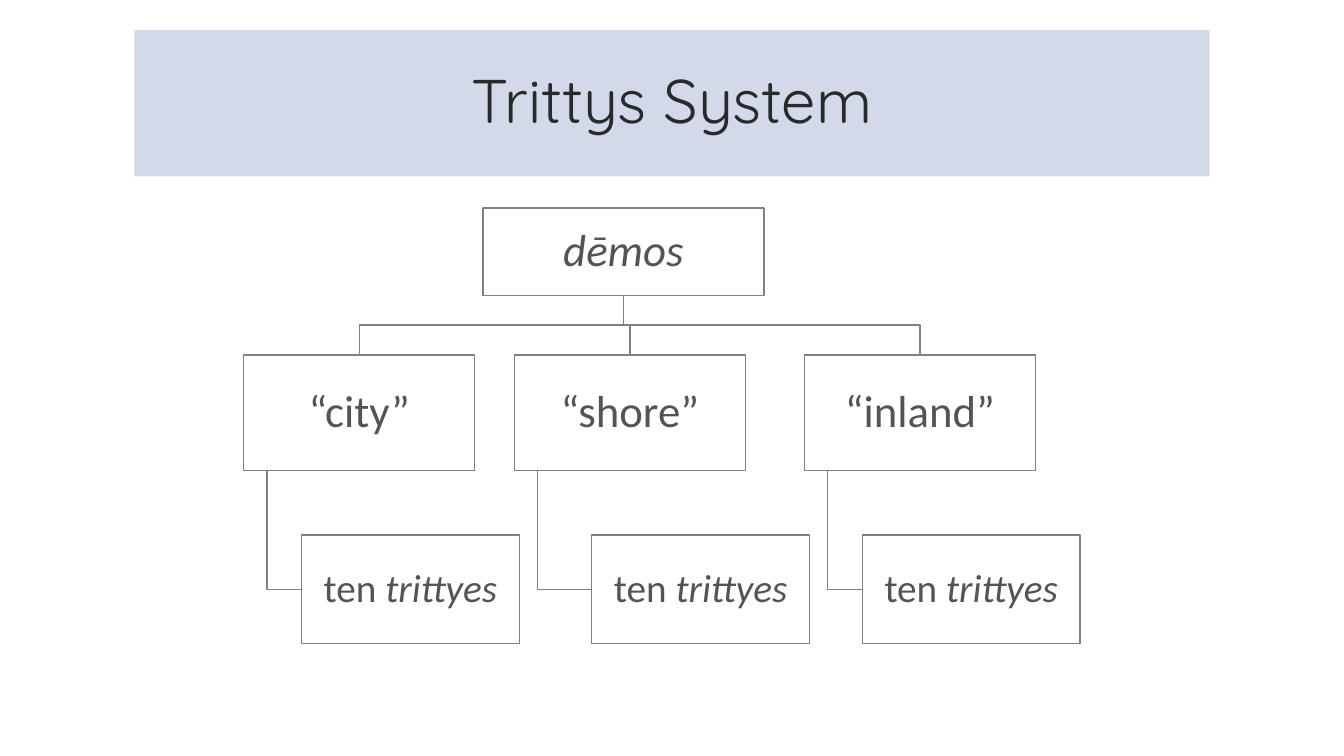
"""Build the Trittys System slide: a title band above a three-branch hierarchy."""
from pptx import Presentation
from pptx.dml.color import RGBColor
from pptx.enum.shapes import MSO_SHAPE
from pptx.enum.text import MSO_ANCHOR, PP_ALIGN
from pptx.util import Pt

BAND = RGBColor(0xD2, 0xDA, 0xEA)
TITLE_INK = RGBColor(0x2A, 0x2A, 0x2A)
INK = RGBColor(0x54, 0x54, 0x54)
GREY = RGBColor(0x80, 0x80, 0x80)
WHITE = RGBColor(0xFF, 0xFF, 0xFF)

presentation = Presentation()
presentation.slide_width = Pt(960)
presentation.slide_height = Pt(540)
slide = presentation.slides.add_slide(presentation.slide_layouts[6])


def add_box(left, top, width, height, runs, size, font="Calibri",
            ink=INK, fill=WHITE, line=GREY, inset=1.5):
    shape = slide.shapes.add_shape(
        MSO_SHAPE.RECTANGLE, Pt(left), Pt(top), Pt(width), Pt(height))
    shape.shadow.inherit = False
    shape.fill.solid()
    shape.fill.fore_color.rgb = fill
    if line is None:
        shape.line.fill.background()
    else:
        shape.line.color.rgb = line
        shape.line.width = Pt(1)
    frame = shape.text_frame
    frame.word_wrap = True
    frame.vertical_anchor = MSO_ANCHOR.MIDDLE
    frame.margin_left = frame.margin_right = Pt(inset)
    frame.margin_top = frame.margin_bottom = Pt(inset)
    paragraph = frame.paragraphs[0]
    paragraph.alignment = PP_ALIGN.CENTER
    paragraph.line_spacing = 0.9
    paragraph.font.size = Pt(size)
    paragraph.font.name = font
    paragraph.font.color.rgb = ink
    for text, italic in runs:
        run = paragraph.add_run()
        run.text = text
        run.font.italic = italic


def add_branch(points):
    start, *others = [(Pt(x), Pt(y)) for x, y in points]
    builder = slide.shapes.build_freeform(*start)
    builder.add_line_segments(others, close=False)
    shape = builder.convert_to_shape()
    shape.shadow.inherit = False
    shape.fill.background()
    shape.line.color.rgb = GREY
    shape.line.width = Pt(1)


add_box(96, 21.6, 768, 104.4, [("Trittys System", False)], 44,
        font="Quicksand", ink=TITLE_INK, fill=BAND, line=None, inset=7.2)

ROOT_LEFT, ROOT_TOP, ROOT_WIDTH, ROOT_HEIGHT = 344.9, 148.5, 200.9, 62.5
REGION_TOP, REGION_WIDTH, REGION_HEIGHT = 253.5, 165, 82.5
LEAF_TOP, LEAF_WIDTH, LEAF_HEIGHT = 382.2, 155.5, 77.5
REGIONS = [("“city”", 174.1, 215.4), ("“shore”", 367.4, 422.7), ("“inland”", 574.7, 616)]

root_middle = ROOT_LEFT + ROOT_WIDTH / 2
root_bottom = ROOT_TOP + ROOT_HEIGHT
bar_y = (root_bottom + REGION_TOP) / 2
leaf_middle = LEAF_TOP + LEAF_HEIGHT / 2

for name, region_left, leaf_left in REGIONS:
    region_middle = region_left + REGION_WIDTH / 2
    stem_x = region_left + REGION_WIDTH / 10
    add_branch([(root_middle, root_bottom), (root_middle, bar_y),
                (region_middle, bar_y), (region_middle, REGION_TOP)])
    add_branch([(stem_x, REGION_TOP + REGION_HEIGHT), (stem_x, leaf_middle),
                (leaf_left, leaf_middle)])

add_box(ROOT_LEFT, ROOT_TOP, ROOT_WIDTH, ROOT_HEIGHT, [("dēmos", True)], 32)
for name, region_left, leaf_left in REGIONS:
    add_box(region_left, REGION_TOP, REGION_WIDTH, REGION_HEIGHT, [(name, False)], 32)
    add_box(leaf_left, LEAF_TOP, LEAF_WIDTH, LEAF_HEIGHT,
            [("ten ", False), ("trittyes", True)], 28)

presentation.save("out.pptx")
